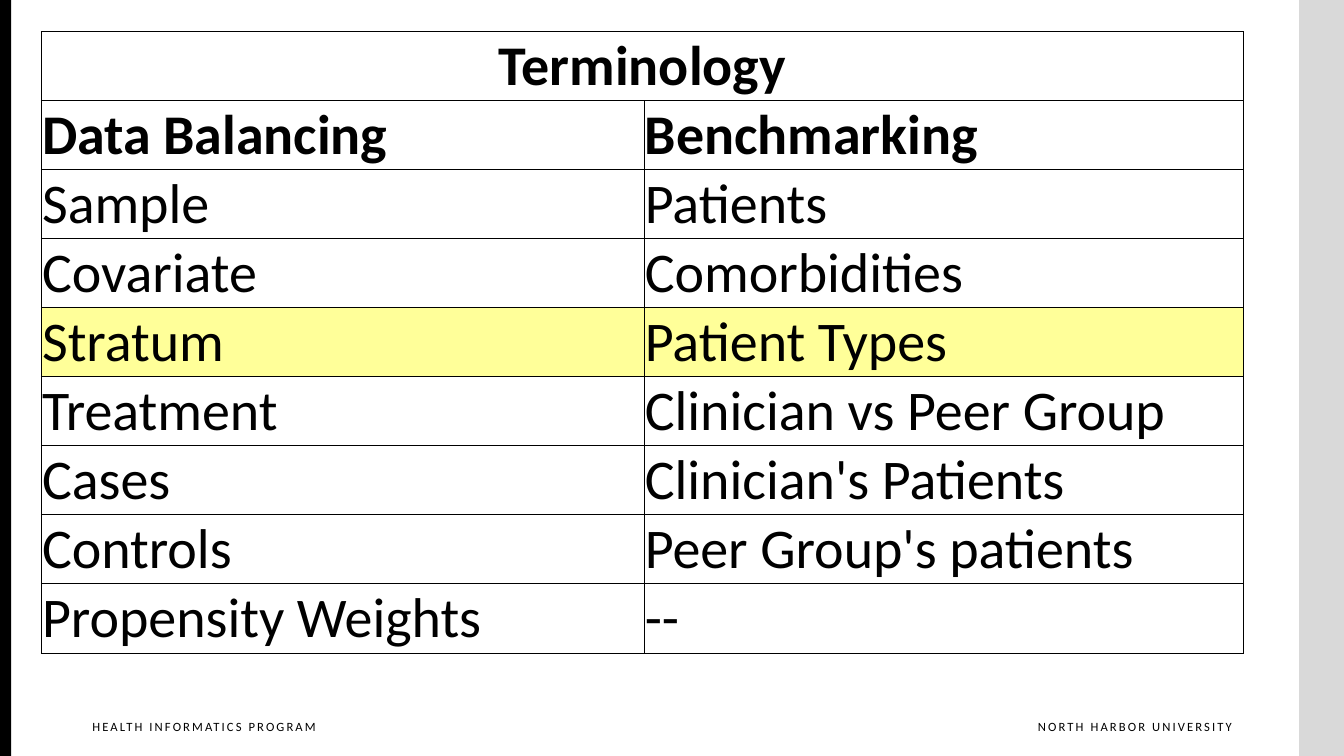
from lxml import etree
from pptx import Presentation
from pptx.dml.color import RGBColor
from pptx.enum.shapes import MSO_SHAPE
from pptx.enum.text import MSO_ANCHOR, PP_ALIGN
from pptx.oxml.ns import qn
from pptx.util import Cm, Pt

RECTANGLE = MSO_SHAPE.RECTANGLE
MIDDLE = MSO_ANCHOR.MIDDLE
LEFT, CENTER, RIGHT = PP_ALIGN.LEFT, PP_ALIGN.CENTER, PP_ALIGN.RIGHT

BLACK, GRAY, YELLOW = "000000", "D9D9D9", "FFFF99"
PAGE_WIDTH, PAGE_HEIGHT = 33.87, 19.05
ROW_HEIGHT = 1.74
COLUMN_WIDTHS = (15.19, 15.11)
BORDER_SIDES = ("a:lnL", "a:lnR", "a:lnT", "a:lnB")

TITLE = "Terminology"
HEADINGS = ("Data Balancing", "Benchmarking")
TERMS = (
    ("Sample", "Patients"),
    ("Covariate", "Comorbidities"),
    ("Stratum", "Patient Types"),
    ("Treatment", "Clinician vs Peer Group"),
    ("Cases", "Clinician's Patients"),
    ("Controls", "Peer Group's patients"),
    ("Propensity Weights", "--"),
)
HIGHLIGHTED_TERM = "Stratum"

CELL_FORMAT = {
    "margin_left": Cm(0.02),
    "margin_right": Cm(0.02),
    "margin_top": Cm(0.02),
    "margin_bottom": Cm(0),
    "vertical_anchor": MIDDLE,
}
FOOTER_FORMAT = {
    "margin_left": Cm(0.25),
    "margin_right": Cm(0),
    "margin_top": Cm(0.13),
    "margin_bottom": Cm(0.13),
    "word_wrap": True,
}


def color(hex_value):
    return RGBColor.from_string(hex_value)


def apply_format(target, values):
    for name, value in values.items():
        setattr(target, name, value)


def write(frame, text, size, bold=False, alignment=LEFT):
    para = frame.paragraphs[0]
    para.alignment = alignment
    span = para.add_run()
    span.text = text
    apply_format(span.font, {"name": "Calibri", "size": Pt(size), "bold": bold})
    span.font.color.rgb = color(BLACK)
    return span


def add_band(page, left, width, fill):
    band = page.shapes.add_shape(RECTANGLE, Cm(left), Cm(0), Cm(width), Cm(PAGE_HEIGHT))
    band.shadow.inherit = False
    band.fill.solid()
    band.fill.fore_color.rgb = color(fill)
    band.line.fill.background()


def add_footer(page, text, left, width, alignment):
    box = page.shapes.add_textbox(Cm(left), Cm(17.98), Cm(width), Cm(0.84))
    apply_format(box.text_frame, FOOTER_FORMAT)
    span = write(box.text_frame, text, 9, alignment=alignment)
    span.font._element.set("spc", "150")


def add_borders(cell):
    properties = cell._tc.get_or_add_tcPr()
    for position, side in enumerate(BORDER_SIDES):
        border = etree.Element(qn(side), w=str(Pt(0.5)))
        fill = etree.SubElement(border, qn("a:solidFill"))
        etree.SubElement(fill, qn("a:srgbClr"), val=BLACK)
        properties.insert(position, border)


def style_cell(cell, fill=None):
    apply_format(cell, CELL_FORMAT)
    if fill:
        cell.fill.solid()
        cell.fill.fore_color.rgb = color(fill)
    else:
        cell.fill.background()
    add_borders(cell)


def add_terminology_table(page):
    rows = ((TITLE, ""), HEADINGS) + TERMS
    frame = page.shapes.add_table(
        len(rows), len(COLUMN_WIDTHS), Cm(1.04), Cm(0.79),
        Cm(sum(COLUMN_WIDTHS)), Cm(ROW_HEIGHT * len(rows)),
    )
    table = frame.table
    apply_format(table, {"first_row": False, "horz_banding": False})
    for column, width in zip(table.columns, COLUMN_WIDTHS):
        column.width = Cm(width)
    table.cell(0, 0).merge(table.cell(0, 1))
    for row_index, texts in enumerate(rows):
        table.rows[row_index].height = Cm(ROW_HEIGHT)
        fill = YELLOW if texts[0] == HIGHLIGHTED_TERM else None
        alignment = CENTER if row_index == 0 else LEFT
        for column_index, text in enumerate(texts):
            cell = table.cell(row_index, column_index)
            style_cell(cell, fill)
            if text:
                write(cell.text_frame, text, 40, row_index < 2, alignment)


def main():
    deck = Presentation()
    deck.slide_width, deck.slide_height = Cm(PAGE_WIDTH), Cm(PAGE_HEIGHT)
    page = deck.slides.add_slide(deck.slide_layouts[6])
    add_band(page, 32.74, 1.13, GRAY)
    add_band(page, 0, 0.28, BLACK)
    add_footer(page, "NORTH HARBOR UNIVERSITY", 25.07, 5.97, RIGHT)
    add_footer(page, "HEALTH INFORMATICS PROGRAM", 2.08, 6.45, LEFT)
    add_terminology_table(page)
    deck.save("out.pptx")


main()
